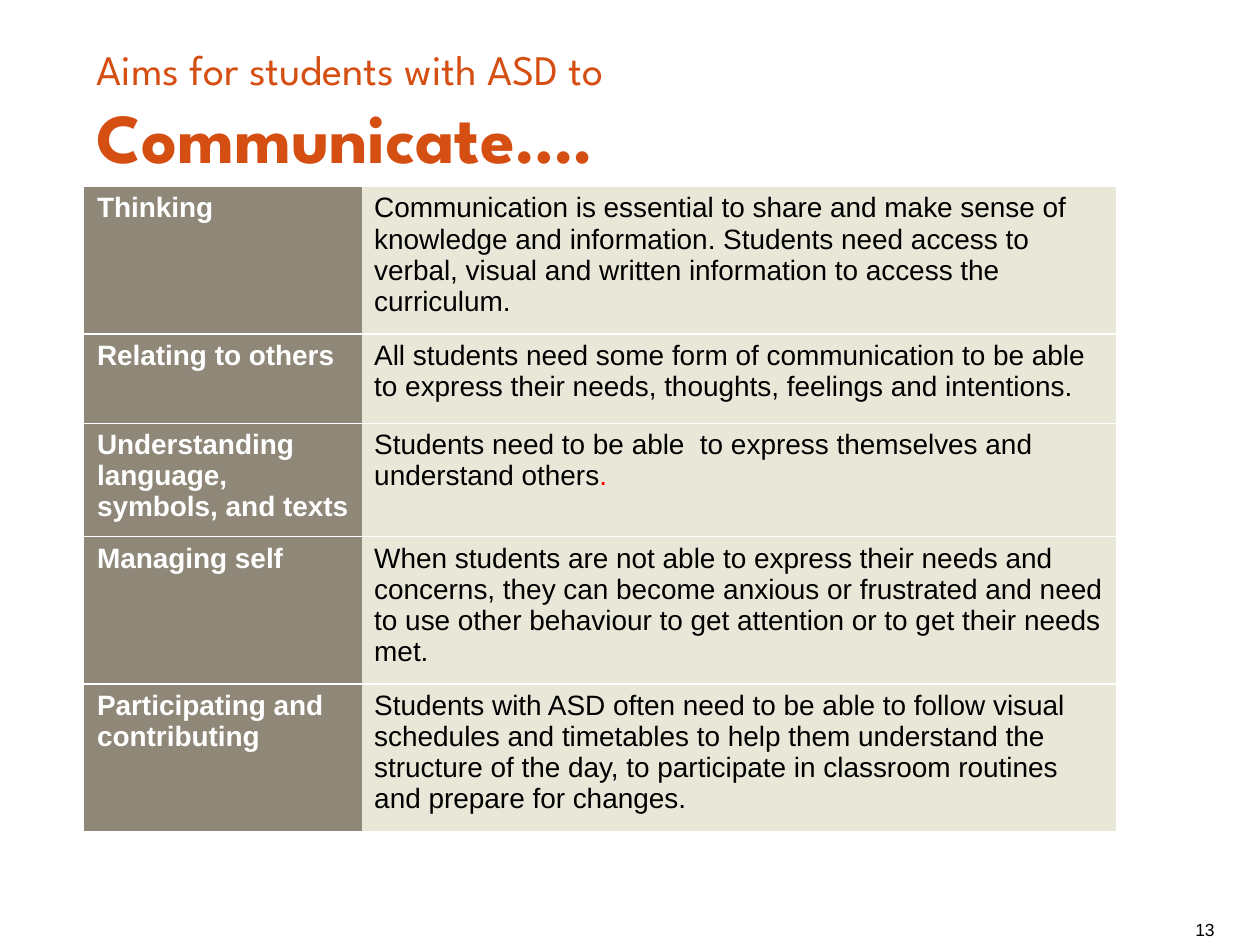
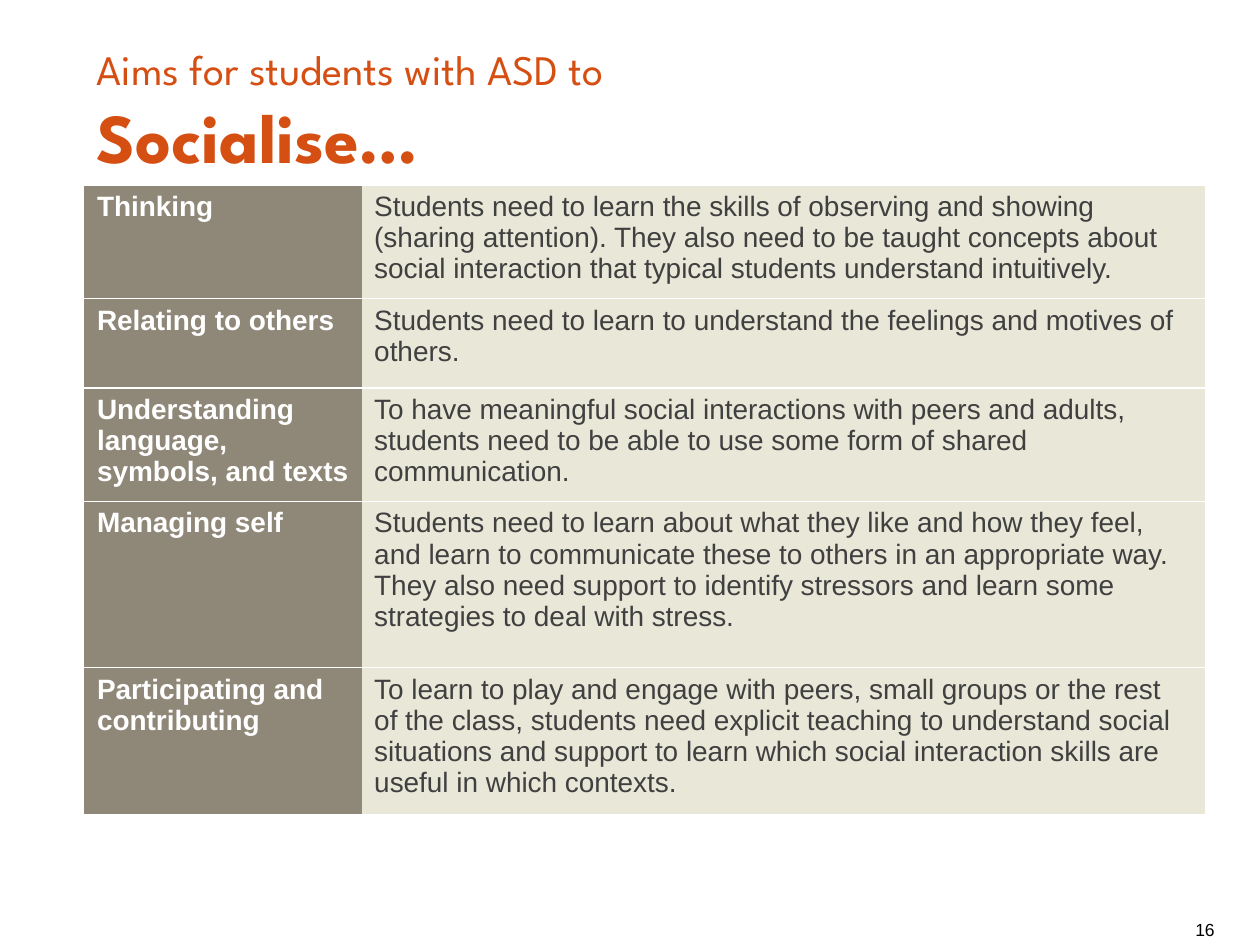
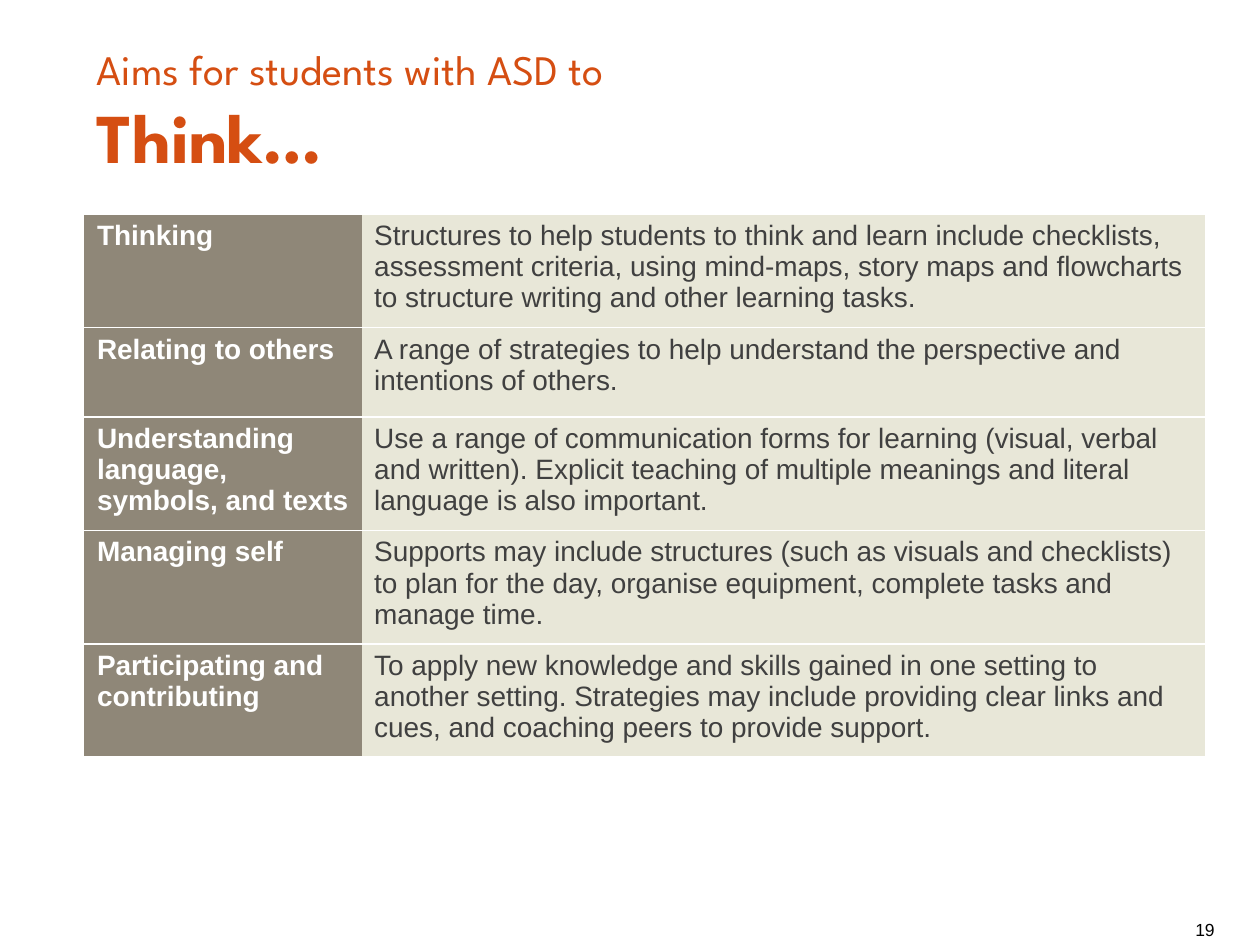
from lxml import etree
from pptx import Presentation
from pptx import util as u
from pptx.dml.color import RGBColor
from pptx.enum import text
from pptx.oxml import parse_xml
from pptx.oxml.ns import nsdecls, qn

ORANGE = RGBColor(0xD5, 0x4E, 0x12)
TAUPE = RGBColor(0x8F, 0x87, 0x78)
CREAM = RGBColor(0xE8, 0xE7, 0xD8)
WHITE = RGBColor(0xFF, 0xFF, 0xFF)
BLACK = RGBColor(0x00, 0x00, 0x00)
GREY = RGBColor(0x40, 0x40, 0x40)
RED = RGBColor(0xFF, 0x00, 0x00)

LEAD = "Aims for students with ASD to"
COMPETENCIES = [
    "Thinking",
    "Relating to others",
    "Understanding language, symbols, and texts",
    "Managing self",
    "Participating and contributing",
]
AIMS = [
    {
        "title": "Communicate….",
        "number": "13",
        "top": 1.48,
        "body_width": 5.99,
        "color": BLACK,
        "heights": [1.17, 0.71, 0.9, 1.17, 1.17],
        "bodies": [
            ["Communication is essential to share and make sense of knowledge and information. Students need access to verbal, visual and written information to access the curriculum."],
            ["All students need some form of communication to be able to express their needs, thoughts, feelings and intentions."],
            ["Students need to be able  to express themselves and understand others", "."],
            ["When students are not able to express their needs and concerns, they can become anxious or frustrated and need to use other behaviour to get attention or to get their needs met."],
            ["Students with ASD often need to be able to follow visual schedules and timetables to help them understand the structure of the day, to participate in classroom routines and prepare for changes."],
        ],
    },
    {
        "title": "Socialise…",
        "number": "16",
        "top": 1.47,
        "body_width": 6.69,
        "color": GREY,
        "heights": [0.9, 0.71, 0.9, 1.32, 1.17],
        "bodies": [
            ["Students need to learn the skills of observing and showing (sharing attention). They also need to be taught concepts about social interaction that typical students understand intuitively."],
            ["Students need to learn to understand the feelings and motives of others."],
            ["To have meaningful social interactions with peers and adults, students need to be able to use some form of shared communication."],
            ["Students need to learn about what they like and how they feel, and learn to communicate these to others in an appropriate way. They also need support to identify stressors and learn some strategies to deal with stress."],
            ["To learn to play and engage with peers, small groups or the rest of the class, students need explicit teaching to understand social situations and support to learn which social interaction skills are useful in which contexts."],
        ],
    },
    {
        "title": "Think…",
        "number": "19",
        "top": 1.7,
        "body_width": 6.69,
        "color": GREY,
        "heights": [0.9, 0.71, 0.9, 0.9, 0.9],
        "bodies": [
            ["Structures to help students to think and learn include checklists, assessment criteria, using mind-maps, story maps and flowcharts to structure writing and other learning tasks."],
            ["A range of strategies to help understand the perspective and intentions of others."],
            ["Use a range of communication forms for learning (visual, verbal and written). Explicit teaching of multiple meanings and literal language is also important."],
            ["Supports may include structures (such as visuals and checklists) to plan for the day, organise equipment, complete tasks and manage time."],
            ["To apply new knowledge and skills gained in one setting to another setting. Strategies may include providing clear links and cues, and coaching peers to provide support."],
        ],
    },
]

LEFT = 0.67
LABEL_WIDTH = 2.2
NO_STYLE = "{2D5ABB26-0587-4C30-8999-92F81FD0307C}"
LEAD_FONT = {"name": "League Spartan", "size": u.Pt(24), "bold": False}
TITLE_FONT = {"name": "League Spartan", "size": u.Pt(40), "bold": True}
NUMBER_FONT = {"name": "Arial", "size": u.Pt(10), "bold": False}
LABEL_FONT = {"name": "Arial", "size": u.Pt(16), "bold": True}
BODY_FONT = {"name": "Arial", "size": u.Pt(16), "bold": False}


def add_run(paragraph, words, font, color):
    run = paragraph.add_run()
    run.text = words
    for name, value in font.items():
        setattr(run.font, name, value)
    run.font.color.rgb = color


def add_text_box(slide, place, margins, anchor):
    frame = slide.shapes.add_textbox(*map(u.Inches, place)).text_frame
    frame.word_wrap = True
    frame.vertical_anchor = anchor
    for side, margin in zip(("left", "top", "right", "bottom"), margins):
        setattr(frame, f"margin_{side}", u.Inches(margin))
    return frame.paragraphs[0]


def add_title(slide, title):
    paragraph = add_text_box(slide, (LEFT, 0.26, 8.98, 1.19), (0.1, 0.04, 0, 0.04), text.MSO_ANCHOR.BOTTOM)
    add_run(paragraph, LEAD, LEAD_FONT, ORANGE)
    paragraph.add_line_break()
    add_run(paragraph, title, TITLE_FONT, ORANGE)


def add_number(slide, number):
    paragraph = add_text_box(slide, (7.52, 7.22, 2.12, 0.31), (0, 0, 0, 0), text.MSO_ANCHOR.MIDDLE)
    paragraph.alignment = text.PP_ALIGN.RIGHT
    add_run(paragraph, number, NUMBER_FONT, BLACK)


def style_cell(cell, fill):
    cell.fill.solid()
    cell.fill.fore_color.rgb = fill
    properties = cell._tc.get_or_add_tcPr()
    for position, edge in enumerate(("lnT", "lnB")):
        border = parse_xml(
            f'<a:{edge} {nsdecls("a")} w="{u.Pt(1)}"><a:solidFill>'
            f'<a:srgbClr val="{WHITE}"/></a:solidFill></a:{edge}>'
        )
        properties.insert(position, border)


def add_aims_table(slide, aim):
    widths = (LABEL_WIDTH, aim["body_width"])
    heights = aim["heights"]
    place = (LEFT, aim["top"], sum(widths), sum(heights))
    table = slide.shapes.add_table(len(COMPETENCIES), 2, *map(u.Inches, place)).table
    table.first_row = table.horz_banding = False
    table._tbl.tblPr.find(qn("a:tableStyleId")).text = NO_STYLE
    for column, width in zip(table.columns, widths):
        column.width = u.Inches(width)
    for row, height, competency, body in zip(table.rows, heights, COMPETENCIES, aim["bodies"]):
        row.height = u.Inches(height)
        label_cell, body_cell = row.cells
        style_cell(label_cell, TAUPE)
        style_cell(body_cell, CREAM)
        add_run(label_cell.text_frame.paragraphs[0], competency, LABEL_FONT, WHITE)
        for words, color in zip(body, (aim["color"], RED)):
            add_run(body_cell.text_frame.paragraphs[0], words, BODY_FONT, color)


def main():
    presentation = Presentation()
    presentation.slide_width = u.Inches(10)
    presentation.slide_height = u.Inches(7.5)
    for aim in AIMS:
        slide = presentation.slides.add_slide(presentation.slide_layouts[6])
        add_title(slide, aim["title"])
        add_number(slide, aim["number"])
        add_aims_table(slide, aim)
    presentation.save("out.pptx")


if __name__ == "__main__":
    main()
